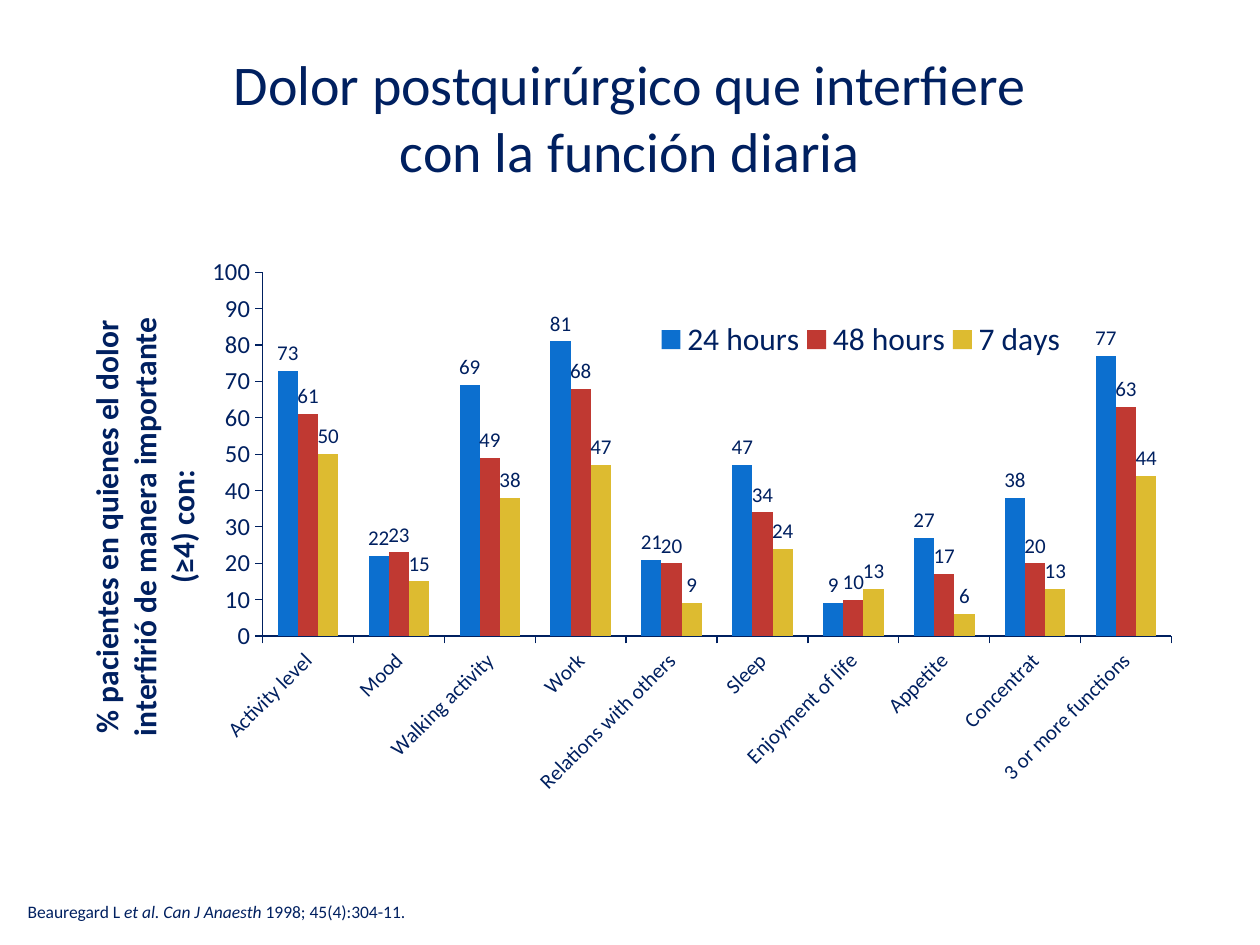
from dataclasses import dataclass

from lxml.etree import SubElement
from pptx import Presentation
from pptx.chart.data import CategoryChartData
from pptx.dml.color import RGBColor
from pptx.enum.chart import XL_CHART_TYPE as ChartType
from pptx.enum.chart import XL_LABEL_POSITION as LabelPosition
from pptx.enum.chart import XL_LEGEND_POSITION as LegendPosition
from pptx.enum.chart import XL_TICK_MARK as TickMark
from pptx.enum.text import MSO_ANCHOR as Anchor
from pptx.enum.text import PP_ALIGN as Align
from pptx.oxml.ns import qn
from pptx.util import Pt

NAVY = RGBColor(0x00, 0x20, 0x60)
BLUE = RGBColor(0x0C, 0x6F, 0xCF)
RED = RGBColor(0xC0, 0x39, 0x32)
GOLD = RGBColor(0xDD, 0xBB, 0x30)

FUNCTIONS = ["Activity level", "Mood", "Walking activity", "Work", "Relations with others",
             "Sleep", "Enjoyment of life", "Appetite", "Concentrat", "3 or more functions"]
PERIODS = [
    ("24 hours", (73, 22, 69, 81, 21, 47, 9, 27, 38, 77), BLUE),
    ("48 hours", (61, 23, 49, 68, 20, 34, 10, 17, 20, 63), RED),
    ("7 days", (50, 15, 38, 47, 9, 24, 13, 6, 13, 44), GOLD),
]


def style_font(font, size, bold=False, italic=False, name="Calibri", color=NAVY):
    font.name, font.size, font.bold, font.italic = name, Pt(size), bold, italic
    font.color.rgb = color


def write(paragraph, text, **style):
    run = paragraph.add_run()
    run.text = text
    style_font(run.font, **style)


def place(element, after=None, inner=False, **fractions):
    for old in element.findall(qn("c:layout")):
        element.remove(old)
    layout = SubElement(element, qn("c:layout"))
    element.insert(0 if after is None else element.index(element.find(qn(after))) + 1, layout)
    manual = SubElement(layout, qn("c:manualLayout"))
    if inner:
        SubElement(manual, qn("c:layoutTarget")).set("val", "inner")
    for key in ("x", "y"):
        SubElement(manual, qn(f"c:{key}Mode")).set("val", "edge")
    for key, value in fractions.items():
        SubElement(manual, qn(f"c:{key}")).set("val", str(value))


@dataclass
class Sheet:
    """Holds the slide and draws each kind of element in the shared style."""
    slide: object

    def text(self, box, lines, size, align=Align.LEFT, anchor=Anchor.TOP, wrap=True):
        frame = self.slide.shapes.add_textbox(*map(Pt, box)).text_frame
        frame.word_wrap, frame.vertical_anchor = wrap, anchor
        for number, line in enumerate(lines):
            paragraph = frame.paragraphs[0] if number == 0 else frame.add_paragraph()
            paragraph.alignment = align
            for words, italic in line:
                write(paragraph, words, size=size, italic=italic)

    def axis(self, axis, size):
        axis.has_major_gridlines = False
        axis.major_tick_mark, axis.minor_tick_mark = TickMark.OUTSIDE, TickMark.NONE
        axis.format.line.color.rgb, axis.format.line.width = NAVY, Pt(0.75)
        style_font(axis.tick_labels.font, size)

    def columns(self, box, categories, series, axis_title):
        data = CategoryChartData()
        data.categories = categories
        for name, values, _ in series:
            data.add_series(name, values)
        chart = self.slide.shapes.add_chart(
            ChartType.COLUMN_CLUSTERED, *map(Pt, box), data).chart
        style_font(chart.font, 18)
        chart.has_title = False
        plot = chart.plots[0]
        plot.gap_width, plot.overlap, plot.vary_by_categories = 150, 0, False
        for bars, (_, _, color) in zip(plot.series, series):
            bars.format.fill.solid()
            bars.format.fill.fore_color.rgb = color
            labels = bars.data_labels
            labels.show_value, labels.position = True, LabelPosition.OUTSIDE_END
            style_font(labels.font, 12)

        functions, percent = chart.category_axis, chart.value_axis
        self.axis(functions, 12)
        self.axis(percent, 14)
        functions._element.find(qn("c:txPr")).find(qn("a:bodyPr")).set("rot", "-2700000")
        percent.minimum_scale, percent.maximum_scale, percent.major_unit = 0, 100, 10
        heading = percent.axis_title.text_frame
        write(heading.paragraphs[0], axis_title, size=18, bold=True)
        heading._txBody.find(qn("a:bodyPr")).set("rot", "-5400000")
        heading._txBody.find(qn("a:bodyPr")).set("vert", "horz")

        chart.has_legend = True
        legend = chart.legend
        legend.position, legend.include_in_layout = LegendPosition.RIGHT, True
        style_font(legend.font, 18)
        place(chart._chartSpace.chart.plotArea, inner=True, x=0.19, y=0.05, w=0.79, h=0.65)
        place(percent.axis_title._element, after="c:tx", x=0.03, y=0.12)
        place(legend._element, after="c:legendPos", x=0.53, y=0.13, w=0.36, h=0.08)


def main():
    deck = Presentation()
    deck.slide_width, deck.slide_height = Pt(720), Pt(540)
    sheet = Sheet(deck.slides.add_slide(deck.slide_layouts[6]))
    sheet.text((36, 21.6, 648, 90),
               [[("Dolor postquirúrgico que interfiere\vcon la función diaria".split("\v")[0], False)],
                [("con la función diaria", False)]],
               32, align=Align.CENTER, anchor=Anchor.MIDDLE)
    sheet.columns((25.2, 139.7, 657.4, 319.7), FUNCTIONS, PERIODS,
                  "% pacientes en quienes el dolor interfirió de manera importante (≥4) con:")
    sheet.text((8.64, 511.2, 241.2, 19.4),
               [[("Beauregard L ", False), ("et al. Can J Anaesth", True),
                 (" 1998; 45(4):304-11.", False)]], 10, wrap=False)
    deck.save("out.pptx")


if __name__ == "__main__":
    main()
